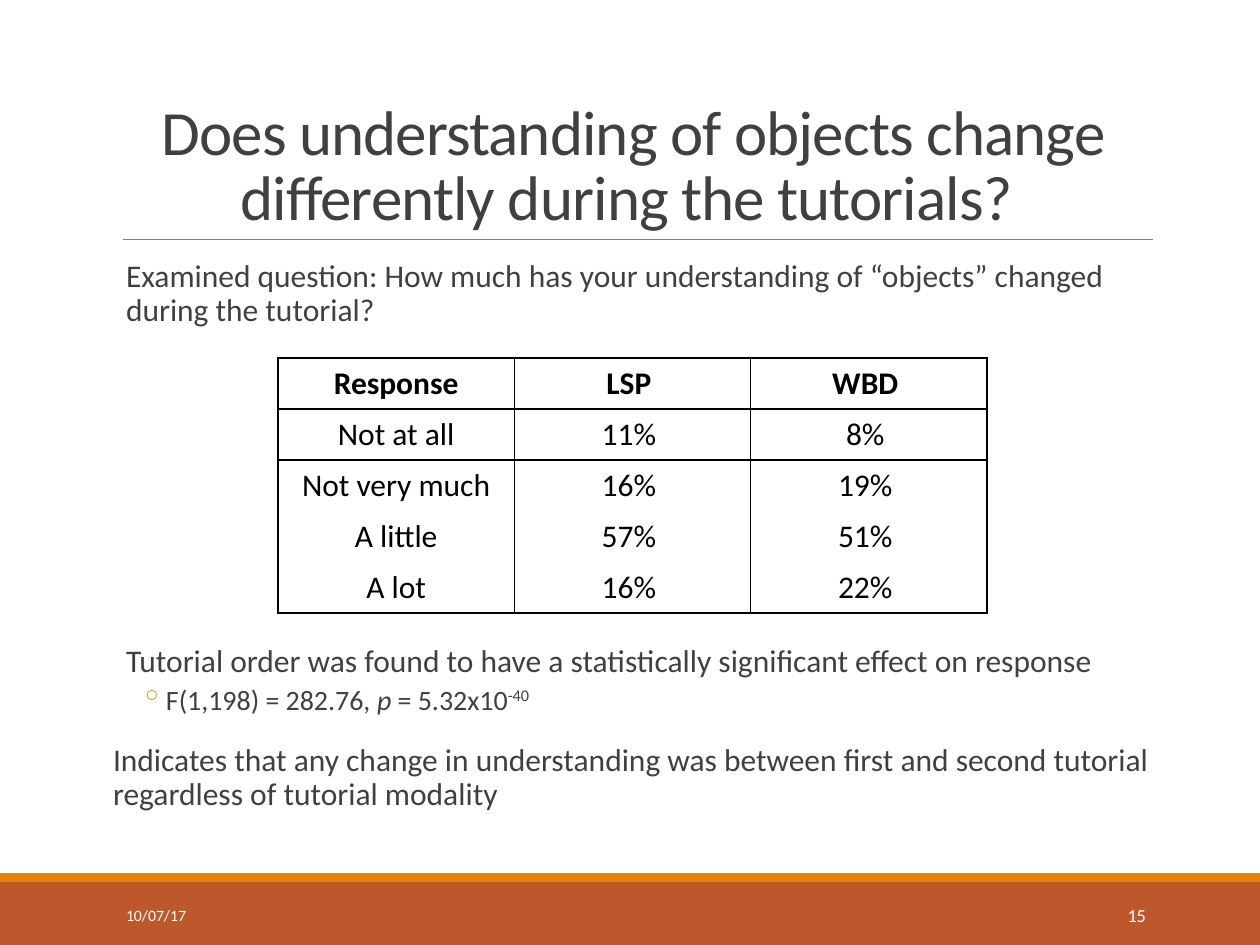
"""Build the slide on how understanding of objects changed during the tutorials."""
import pptx
import pptx.util
import pptx.dml.color
import pptx.enum.shapes
import pptx.enum.text
import pptx.oxml.ns
from lxml import etree

RGBColor = pptx.dml.color.RGBColor
ALIGN = pptx.enum.text.PP_ALIGN
ANCHOR = pptx.enum.text.MSO_ANCHOR
qn = pptx.oxml.ns.qn

RUST = RGBColor(0xBD, 0x58, 0x2C)
ORANGE = RGBColor(0xE4, 0x83, 0x12)
GRAY = RGBColor(0x80, 0x80, 0x80)
DARK = RGBColor(0x40, 0x40, 0x40)
BLACK = RGBColor(0, 0, 0)
WHITE = RGBColor(255, 255, 255)
FONT = "Calibri"

TITLE = "Does understanding of objects change differently during the tutorials? "
QUESTION = [
    {"spans": [("Examined question: How much has your understanding of “objects” "
                "changed during the tutorial?", {})], "margin": 13},
]
FINDINGS = [
    {"spans": [("Tutorial order was found to have a statistically significant "
                "effect on response", {})], "margin": 13},
    {"spans": [("F(1,198) = 282.76, ", {}), ("p", {"italic": True}),
               (" = 5.32x10", {}), ("-40", {"raised": True})],
     "size": 16, "margin": 53, "indent": -25, "bullet": "◦", "before": 2, "after": 4},
    {"spans": [("Indicates that any change in understanding was between first and "
                "second tutorial regardless of tutorial modality", {})]},
]
RESPONSES = [
    ("Response", "LSP ", "WBD "),
    ("Not at all", "11% ", "8% "),
    ("Not very much", "16% ", "19% "),
    ("A little", "57% ", "51% "),
    ("A lot", "16% ", "22% "),
]
RULED_ABOVE = (0, 1, 2, len(RESPONSES))
FOOTERS = [
    ("10/07/17", 9, ALIGN.LEFT, (113, 890, 256, 50)),
    ("15", 10.5, ALIGN.RIGHT, (1023, 890, 136, 50)),
]
BANDS = [(RUST, (0, 882, 1260, 63)), (ORANGE, (0, 873, 1260, 9))]


def px(length):
    return round(length * 914400 / 126)


def add_span(para, text, size, color, bold=False, italic=False, raised=False):
    span = para.add_run()
    span.text = text
    font = span.font
    font.name, font.size = FONT, pptx.util.Pt(size)
    font.color.rgb, font.bold, font.italic = color, bold, italic
    if raised:
        span.font._element.set("baseline", "30000")
    return span


def add_box(page, place, anchor=ANCHOR.TOP, side=0):
    frame = page.shapes.add_textbox(*map(px, place)).text_frame
    frame.word_wrap = True
    frame.vertical_anchor = anchor
    frame.margin_left = frame.margin_right = px(side)
    frame.margin_top = frame.margin_bottom = px(6)
    return frame


def add_body(page, place, content):
    frame = add_box(page, place)
    for index, item in enumerate(content):
        para = frame.paragraphs[0] if index == 0 else frame.add_paragraph()
        para.line_spacing = 0.9
        para.space_before = pptx.util.Pt(item.get("before", 12) if index else 0)
        para.space_after = pptx.util.Pt(item.get("after", 2))
        props = para._p.get_or_add_pPr()
        props.set("marL", str(px(item.get("margin", 0))))
        props.set("indent", str(px(item.get("indent", 0))))
        if "bullet" in item:
            tint = etree.SubElement(props, qn("a:buClr"))
            etree.SubElement(tint, qn("a:srgbClr"), val=str(ORANGE))
            etree.SubElement(props, qn("a:buChar"), char=item["bullet"])
        for text, style in item["spans"]:
            add_span(para, text, item.get("size", 18), DARK, **style)


def set_borders(cell, row):
    shown = {"L": True, "R": True, "T": row in RULED_ABOVE, "B": row + 1 in RULED_ABOVE}
    props = cell._tc.get_or_add_tcPr()
    for side, visible in shown.items():
        line = etree.SubElement(props, qn(f"a:ln{side}"), w="12700")
        if visible:
            fill = etree.SubElement(line, qn("a:solidFill"))
            etree.SubElement(fill, qn("a:srgbClr"), val=str(BLACK))
        else:
            etree.SubElement(line, qn("a:noFill"))


def add_responses(page):
    rows, columns = len(RESPONSES), len(RESPONSES[0])
    table = page.shapes.add_table(rows, columns, px(278), px(358), px(709), px(51 * rows)).table
    table.first_row = table.horz_banding = False
    for row, texts in enumerate(RESPONSES):
        for column, text in enumerate(texts):
            cell = table.cell(row, column)
            set_borders(cell, row)
            cell.fill.background()
            cell.vertical_anchor = ANCHOR.MIDDLE
            para = cell.text_frame.paragraphs[0]
            para.alignment = ALIGN.CENTER
            add_span(para, text, 18, BLACK, bold=row == 0)


def main():
    deck = pptx.Presentation()
    deck.slide_width, deck.slide_height = px(1260), px(945)
    page = deck.slides.add_slide(deck.slide_layouts[6])

    for color, place in BANDS:
        band = page.shapes.add_shape(pptx.enum.shapes.MSO_SHAPE.RECTANGLE, *map(px, place))
        band.shadow.inherit = False
        band.fill.solid()
        band.fill.fore_color.rgb = color
        band.line.fill.background()

    rule = page.shapes.add_connector(
        pptx.enum.shapes.MSO_CONNECTOR.STRAIGHT, px(123), px(239), px(1153), px(239))
    rule.line.color.rgb, rule.line.width = GRAY, pptx.util.Pt(0.5)
    etree.SubElement(rule._element.spPr, qn("a:effectLst"))

    para = add_box(page, (113, 39, 1040, 200), ANCHOR.BOTTOM, 13).paragraphs[0]
    para.alignment, para.line_spacing = ALIGN.CENTER, 0.85
    add_span(para, TITLE, 36, DARK).font._element.set("spc", "-50")

    add_body(page, (113, 254, 1040, 90), QUESTION)
    add_body(page, (113, 639, 1040, 200), FINDINGS)
    add_responses(page)

    for text, size, align, place in FOOTERS:
        para = add_box(page, place, ANCHOR.MIDDLE, 13).paragraphs[0]
        para.alignment = align
        add_span(para, text, size, WHITE)

    deck.save("out.pptx")


if __name__ == "__main__":
    main()
